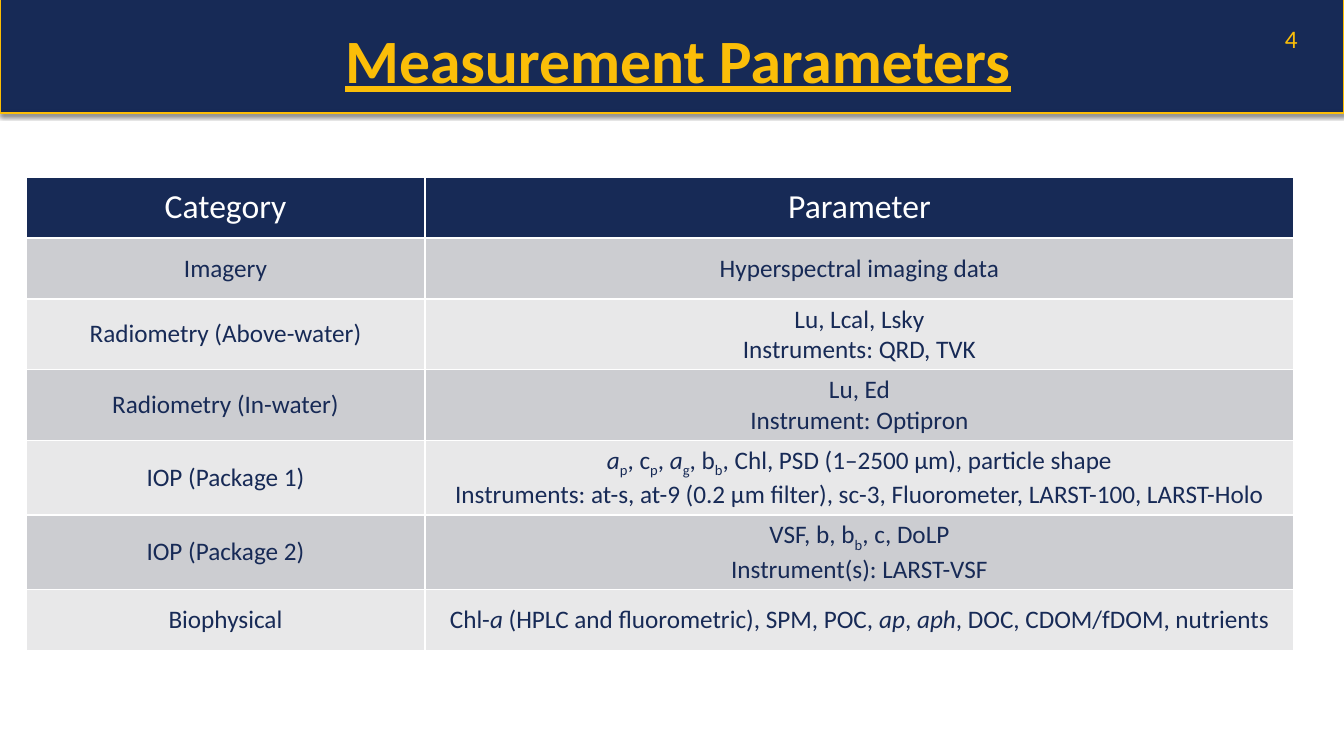
import pptx
import pptx.dml.color
import pptx.enum.shapes
import pptx.enum.text
import pptx.oxml
import pptx.oxml.ns
import pptx.util
from lxml import etree

PX = 914400 / 100.8
FONT = "Calibri"
COLORS = {
    "navy": "172A56",
    "gold": "FBBE08",
    "bar_edge": "FBBD02",
    "white": "FFFFFF",
    "dark_band": "CCCDD1",
    "light_band": "E8E8E9",
    "shadow": "000000",
}
COLUMN_WIDTHS = [399, 869]
ROW_HEIGHT = 61

# Each cell is a list of lines; "|" parts the runs, "*" marks italic, "_" subscript
ROWS = [
    (["Category"], ["Parameter"]),
    (["Imagery"], ["Hyperspectral imaging data"]),
    (["Radiometry (Above-water)"],
     ["Lu, Lcal, Lsky", "Instruments: QRD, TVK"]),
    (["Radiometry (In-water)"], ["Lu, Ed", "Instrument: Optipron"]),
    (["IOP (Package 1)"],
     ["*a|_p|, c|_p|, |*a|_g|, b|_b|, Chl, PSD (1–2500 µm), particle shape",
      "Instruments: at-s, at-9 (0.2 µm filter), sc-3, Fluorometer, "
      "LARST-100, LARST-Holo"]),
    (["IOP (Package 2)"],
     ["VSF, b, b|_b|, c, DoLP", "Instrument(s): LARST-VSF"]),
    (["Biophysical"],
     ["Chl-|*a| (HPLC and fluorometric), SPM, POC, |*ap|, |*aph"
      "|, DOC, CDOM/fDOM, nutrients"]),
]


def px(length):
    return pptx.util.Emu(round(length * PX))


def rgb(name):
    return pptx.dml.color.RGBColor.from_string(COLORS[name])


def style_font(font, size, color):
    font.name = FONT
    font.size = pptx.util.Pt(size)
    font.color.rgb = rgb(color)


def add_shadow(shape, alpha, blur, distance):
    properties = shape._element.spPr
    for old in properties.findall(pptx.oxml.ns.qn("a:effectLst")):
        properties.remove(old)
    properties.append(pptx.oxml.parse_xml(
        f'<a:effectLst {pptx.oxml.ns.nsdecls("a")}>'
        f'<a:outerShdw blurRad="{pptx.util.Pt(blur)}" '
        f'dist="{pptx.util.Pt(distance)}" dir="5400000" rotWithShape="0">'
        f'<a:srgbClr val="{COLORS["shadow"]}"><a:alpha val="{alpha * 1000}"/>'
        f'</a:srgbClr></a:outerShdw></a:effectLst>'))


def add_header_bar(slide):
    bar = slide.shapes.add_shape(
        pptx.enum.shapes.MSO_SHAPE.RECTANGLE, px(0), px(-1), px(1344), px(114))
    bar.fill.solid()
    bar.fill.fore_color.rgb = rgb("navy")
    bar.line.color.rgb = rgb("bar_edge")
    bar.line.width = pptx.util.Pt(0.75)
    add_shadow(bar, 35, 3.1, 1.8)


def add_header_rule(slide):
    rule = slide.shapes.add_connector(
        pptx.enum.shapes.MSO_CONNECTOR.STRAIGHT, px(0), px(113), px(1344), px(113))
    rule.line.color.rgb = rgb("gold")
    rule.line.width = pptx.util.Pt(2)
    add_shadow(rule, 38, 3.1, 1.6)


def add_text(slide, text, left, top, width, height, size, align, anchor):
    box = slide.shapes.add_textbox(px(left), px(top), px(width), px(height))
    frame = box.text_frame
    frame.word_wrap = True
    frame.vertical_anchor = anchor
    frame.text = text
    frame.paragraphs[0].alignment = align
    font = frame.paragraphs[0].runs[0].font
    style_font(font, size, "gold")
    return font


def add_borders(cell):
    properties = cell._tc.get_or_add_tcPr()
    for side in ("lnL", "lnR", "lnT", "lnB"):
        border = etree.SubElement(
            properties, pptx.oxml.ns.qn(f"a:{side}"), w=str(pptx.util.Pt(1)))
        fill = etree.SubElement(border, pptx.oxml.ns.qn("a:solidFill"))
        etree.SubElement(
            fill, pptx.oxml.ns.qn("a:srgbClr"), val=COLORS["white"])


def fill_cell(cell, lines, size, color, band):
    add_borders(cell)
    cell.fill.solid()
    cell.fill.fore_color.rgb = rgb(band)
    cell.vertical_anchor = pptx.enum.text.MSO_ANCHOR.MIDDLE
    frame = cell.text_frame
    for index, line in enumerate(lines):
        paragraph = frame.add_paragraph() if index else frame.paragraphs[0]
        paragraph.alignment = pptx.enum.text.PP_ALIGN.CENTER
        for part in line.split("|"):
            run = paragraph.add_run()
            run.text = part.lstrip("*_")
            style_font(run.font, size, color)
            if part.startswith("*"):
                run.font.italic = True
            elif part.startswith("_"):
                run.font._element.set("baseline", "-25000")


def add_parameter_table(slide):
    table = slide.shapes.add_table(
        len(ROWS), len(COLUMN_WIDTHS), px(26), px(177),
        px(sum(COLUMN_WIDTHS)), px(ROW_HEIGHT * len(ROWS))).table
    for column, width in zip(table.columns, COLUMN_WIDTHS):
        column.width = px(width)
    for row_index, row in enumerate(ROWS):
        if row_index == 0:
            look = (24, "white", "navy")
        else:
            look = (18, "navy", "dark_band" if row_index % 2 else "light_band")
        for column_index, lines in enumerate(row):
            fill_cell(table.cell(row_index, column_index), lines, *look)


def main():
    deck = pptx.Presentation()
    deck.slide_width, deck.slide_height = px(1344), px(756)
    slide = deck.slides.add_slide(deck.slide_layouts[6])

    # Header band with page number and title
    add_header_bar(slide)
    add_text(slide, "4", 1275, 18, 52, 40, 18,
             pptx.enum.text.PP_ALIGN.LEFT, pptx.enum.text.MSO_ANCHOR.TOP)
    add_header_rule(slide)
    title_font = add_text(
        slide, "Measurement Parameters", 26, 16, 1304, 85, 44,
        pptx.enum.text.PP_ALIGN.CENTER, pptx.enum.text.MSO_ANCHOR.MIDDLE)
    title_font.bold = True
    title_font.underline = True

    # Categories and their parameters
    add_parameter_table(slide)
    deck.save("out.pptx")


if __name__ == "__main__":
    main()
